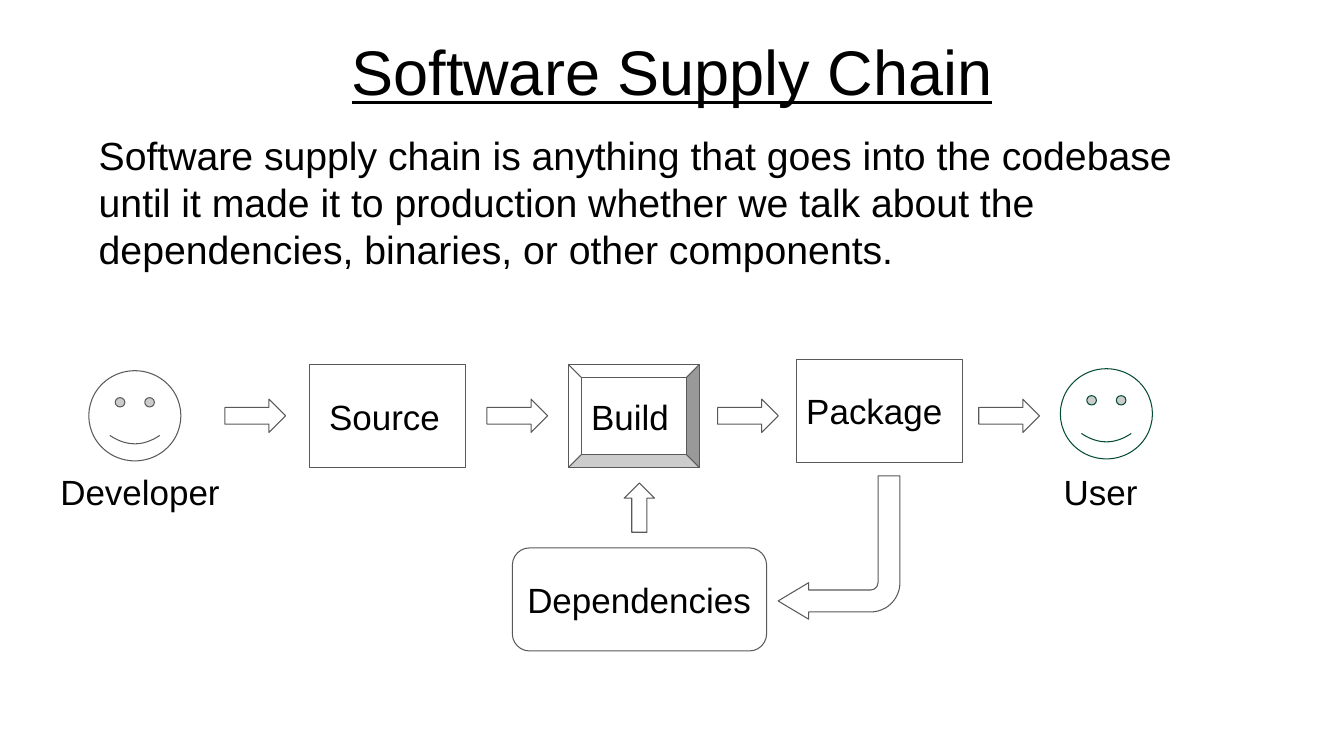
import pptx
import pptx.dml.color
import pptx.enum.shapes
import pptx.enum.text
import pptx.util

Pt = pptx.util.Pt
RGBColor = pptx.dml.color.RGBColor
SHAPE = pptx.enum.shapes.MSO_SHAPE
ANCHOR = pptx.enum.text.MSO_ANCHOR
ALIGN = pptx.enum.text.PP_ALIGN

BLACK = RGBColor(0x00, 0x00, 0x00)
WHITE = RGBColor(0xFF, 0xFF, 0xFF)
GREY = RGBColor(0x59, 0x59, 0x59)
GREEN = RGBColor(0x04, 0x4C, 0x34)

INSET = 7.2
LABEL_SIZE = 25
ARROW_TOP = 285.1
ARROW_LEFTS = (160.6, 347.8, 512.6, 699.1)


def set_values(target, values):
    for name, value in values.items():
        setattr(target, name, value)


def write_text(part, text, size, anchor=ANCHOR.TOP, inset=INSET,
               indent=0, align=ALIGN.LEFT, spacing=1.0, underline=False):
    """Fill the part's frame with one paragraph; indent widens the left inset."""
    frame = part.text_frame
    set_values(frame, {
        "word_wrap": True,
        "auto_size": pptx.enum.text.MSO_AUTO_SIZE.NONE,
        "vertical_anchor": anchor,
        "margin_left": Pt(inset + indent),
        "margin_right": Pt(inset),
        "margin_top": Pt(inset),
        "margin_bottom": Pt(inset),
    })
    paragraph = frame.paragraphs[0]
    set_values(paragraph, {"alignment": align, "line_spacing": spacing})
    run = paragraph.add_run()
    run.text = text
    set_values(run.font, {"name": "Arial", "size": Pt(size),
                          "underline": underline})
    run.font.color.rgb = BLACK


def add_title(slide, text):
    title = slide.shapes.title
    set_values(title, {"left": Pt(72), "top": Pt(22.3),
                       "width": Pt(816), "height": Pt(64)})
    write_text(title, text, 45, ANCHOR.MIDDLE, inset=0,
               align=ALIGN.CENTER, spacing=0.86, underline=True)


def add_text(shapes, text, size, place, indent=0):
    box = shapes.add_textbox(*map(Pt, place))
    write_text(box, text, size, indent=indent)


def add_outlined(shapes, preset, place, line_color=GREY, adjustments=()):
    outlined = shapes.add_shape(preset, *map(Pt, place))
    outlined.shadow.inherit = False
    outlined.fill.solid()
    outlined.fill.fore_color.rgb = WHITE
    outlined.line.color.rgb = line_color
    outlined.line.width = Pt(0.75)
    for index, value in enumerate(adjustments):
        outlined.adjustments[index] = value
    return outlined


def add_stage(slide, text, preset, place, indent=0):
    stage = add_outlined(slide.shapes, preset, place)
    write_text(stage, text, LABEL_SIZE, ANCHOR.MIDDLE, indent=indent)


def add_person(slide, name, face_place, label_place, line_color, indent=0):
    person = slide.shapes.add_group_shape()
    add_outlined(person.shapes, SHAPE.SMILEY_FACE, face_place, line_color)
    add_text(person.shapes, name, LABEL_SIZE, label_place, indent)


def main():
    deck = pptx.Presentation()
    set_values(deck, {"slide_width": Pt(960), "slide_height": Pt(540)})
    slide = deck.slides.add_slide(deck.slide_layouts[5])

    add_title(slide, "Software Supply Chain")
    add_text(slide.shapes,
             "Software supply chain is anything that goes into the codebase "
             "until it made it to production whether we talk about the "
             "dependencies, binaries, or other components.",
             28, (63.4, 86.4, 797.8, 116.6))

    add_stage(slide, "Package", SHAPE.RECTANGLE, (568.8, 256.8, 118.8, 73.6))
    add_stage(slide, "Dependencies", SHAPE.ROUNDED_RECTANGLE,
              (366, 391.4, 181.6, 73.6))
    add_stage(slide, "Build", SHAPE.BEVEL, (406, 260.4, 93.6, 73.6))
    add_stage(slide, "Source", SHAPE.RECTANGLE, (221.2, 260.4, 111.2, 73.6),
              indent=6.7)

    for left in ARROW_LEFTS:
        add_outlined(slide.shapes, SHAPE.RIGHT_ARROW,
                     (left, ARROW_TOP, 43.4, 23.8))
    add_outlined(slide.shapes, SHAPE.UP_ARROW, (445.8, 345, 21.8, 35.2))
    feedback = add_outlined(slide.shapes, SHAPE.BENT_ARROW,
                            (555.8, 339.9, 87, 102.4),
                            adjustments=(0.18, 0.15, 0.25, 0.24))
    feedback.rotation = 180

    add_person(slide, "Developer", (63.4, 264.8, 65.8, 64.4),
               (36, 329, 128.9, 44.6), GREY)
    add_person(slide, "User", (757.4, 263.4, 65.8, 64.4),
               (738.7, 329, 101.5, 44.6), GREEN, indent=13.9)

    deck.save("out.pptx")


if __name__ == "__main__":
    main()
